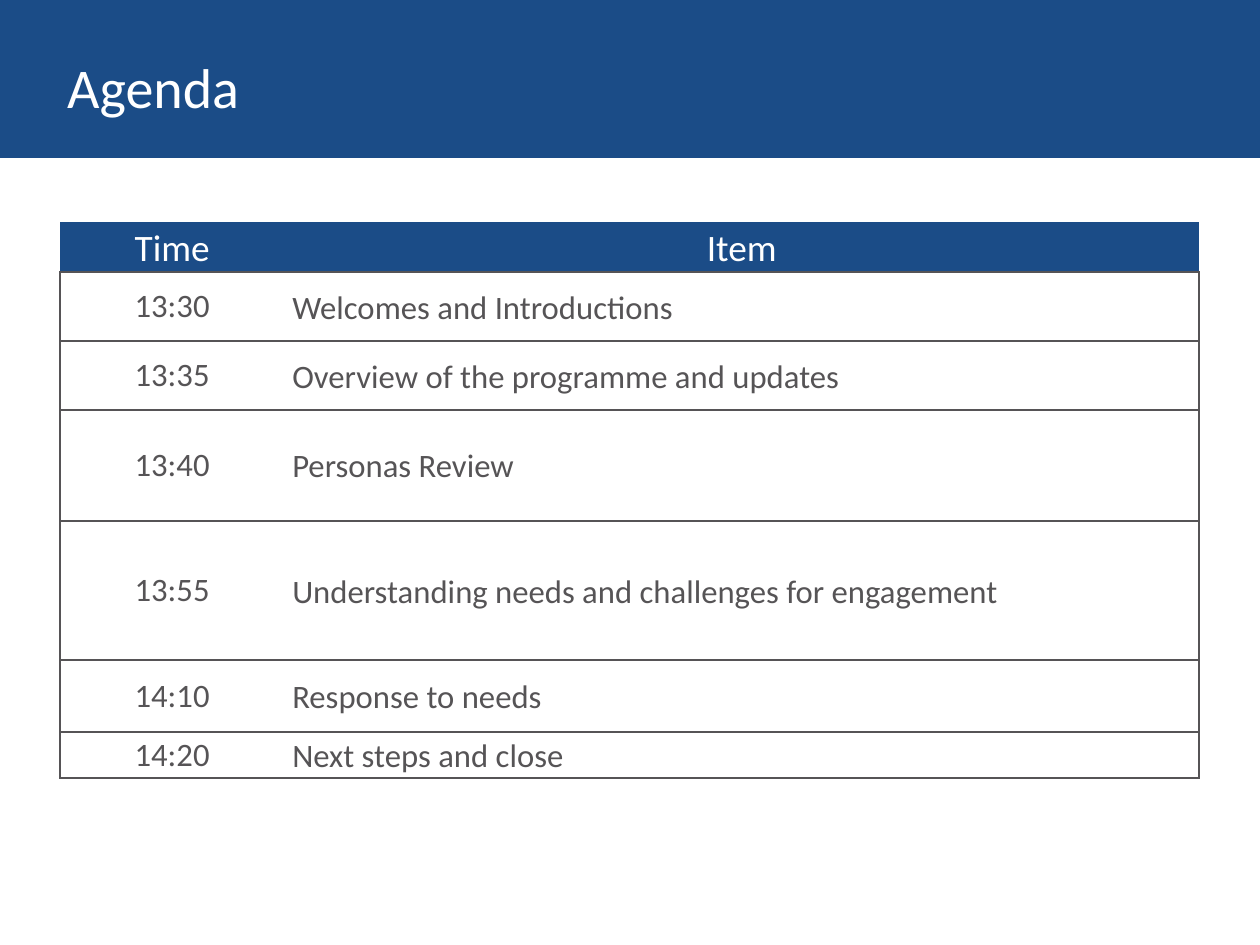
from lxml import etree
from pptx import Presentation
from pptx.dml.color import RGBColor
from pptx.enum.shapes import MSO_SHAPE
from pptx.enum.text import MSO_ANCHOR, PP_ALIGN
from pptx.oxml.ns import qn
from pptx.util import Inches, Pt

COLORS = {"blue": "1B4C87", "grey": "565456", "white": "FFFFFF"}
FONT = "Calibri"
LINE_SPACING = 1.07
SLIDE_WIDTH = Inches(7.5)
SLIDE_HEIGHT = SLIDE_WIDTH * 3 // 4  # 4:3 format

AGENDA = [  # time, item, row height
    ("Time", "Item", 0.3),
    ("13:30", "Welcomes and Introductions", 0.41),
    ("13:35", "Overview of the programme and updates", 0.41),
    ("13:40", "Personas Review", 0.66),
    ("13:55", "Understanding needs and challenges for engagement", 0.83),
    ("14:10", "Response to needs", 0.43),
    ("14:20", "Next steps and close", 0.27),
]
COLUMN_WIDTHS = [1.33, 5.45]


def rgb(name):
    return RGBColor.from_string(COLORS[name])


def write_text(paragraph, text, size, color, align=PP_ALIGN.LEFT, spacing=1.0):
    paragraph.alignment = align
    paragraph.line_spacing = spacing
    run = paragraph.add_run()
    run.text = text
    run.font.name = FONT
    run.font.size = Pt(size)
    run.font.color.rgb = rgb(color)


def set_borders(cell, visible_sides):
    """Draw the given sides in grey and clear the others."""
    properties = cell._tc.get_or_add_tcPr()
    for side in "LRTB":
        line = etree.SubElement(properties, qn(f"a:ln{side}"), w=str(Pt(1)))
        if side in visible_sides:
            fill = etree.SubElement(line, qn("a:solidFill"))
            etree.SubElement(fill, qn("a:srgbClr"), val=COLORS["grey"])
        else:
            etree.SubElement(line, qn("a:noFill"))


def add_title(slide, text):
    title = slide.shapes.title
    title.left, title.top = Inches(0.4), Inches(0.33)
    title.width, title.height = Inches(6.96), Inches(0.37)
    frame = title.text_frame
    frame.margin_left = frame.margin_right = 0
    frame.margin_top = frame.margin_bottom = 0
    frame.vertical_anchor = MSO_ANCHOR.MIDDLE
    frame.word_wrap = True
    write_text(frame.paragraphs[0], text, 24, "white")


def add_banner(slide):
    banner = slide.shapes.add_shape(MSO_SHAPE.RECTANGLE, 0, 0, SLIDE_WIDTH, Inches(0.94))
    banner.shadow.inherit = False
    banner.fill.solid()
    banner.fill.fore_color.rgb = rgb("blue")
    banner.line.fill.background()
    # Place the banner behind the title
    slide.shapes.title.element.addprevious(banner.element)


def format_cell(cell, text, is_header, is_time):
    cell.margin_left = cell.margin_right = Inches(0.05)
    cell.margin_top = cell.margin_bottom = 0
    cell.vertical_anchor = MSO_ANCHOR.MIDDLE
    outer_side = "L" if is_time else "R"
    set_borders(cell, "B" if is_header else "TB" + outer_side)
    cell.fill.solid()
    cell.fill.fore_color.rgb = rgb("blue" if is_header else "white")
    write_text(
        cell.text_frame.paragraphs[0],
        text,
        size=16 if is_header else 14,
        color="white" if is_header else "grey",
        align=PP_ALIGN.CENTER if is_header or is_time else PP_ALIGN.LEFT,
        spacing=LINE_SPACING if is_header or not is_time else 1.0,
    )


def add_agenda(slide):
    total_height = sum(height for _, _, height in AGENDA)
    agenda = slide.shapes.add_table(
        len(AGENDA), len(COLUMN_WIDTHS), Inches(0.36), Inches(1.32),
        Inches(sum(COLUMN_WIDTHS)), Inches(total_height),
    ).table
    agenda.horz_banding = False
    agenda.first_row = False
    for column, width in zip(agenda.columns, COLUMN_WIDTHS):
        column.width = Inches(width)
    for index, (time, item, height) in enumerate(AGENDA):
        agenda.rows[index].height = Inches(height)
        is_header = index == 0
        format_cell(agenda.cell(index, 0), time, is_header, is_time=True)
        format_cell(agenda.cell(index, 1), item, is_header, is_time=False)


def main():
    deck = Presentation()
    deck.slide_width, deck.slide_height = SLIDE_WIDTH, SLIDE_HEIGHT
    slide = deck.slides.add_slide(deck.slide_layouts[5])

    # Header
    add_title(slide, "Agenda")
    add_banner(slide)

    # Schedule
    add_agenda(slide)

    deck.save("out.pptx")


if __name__ == "__main__":
    main()
